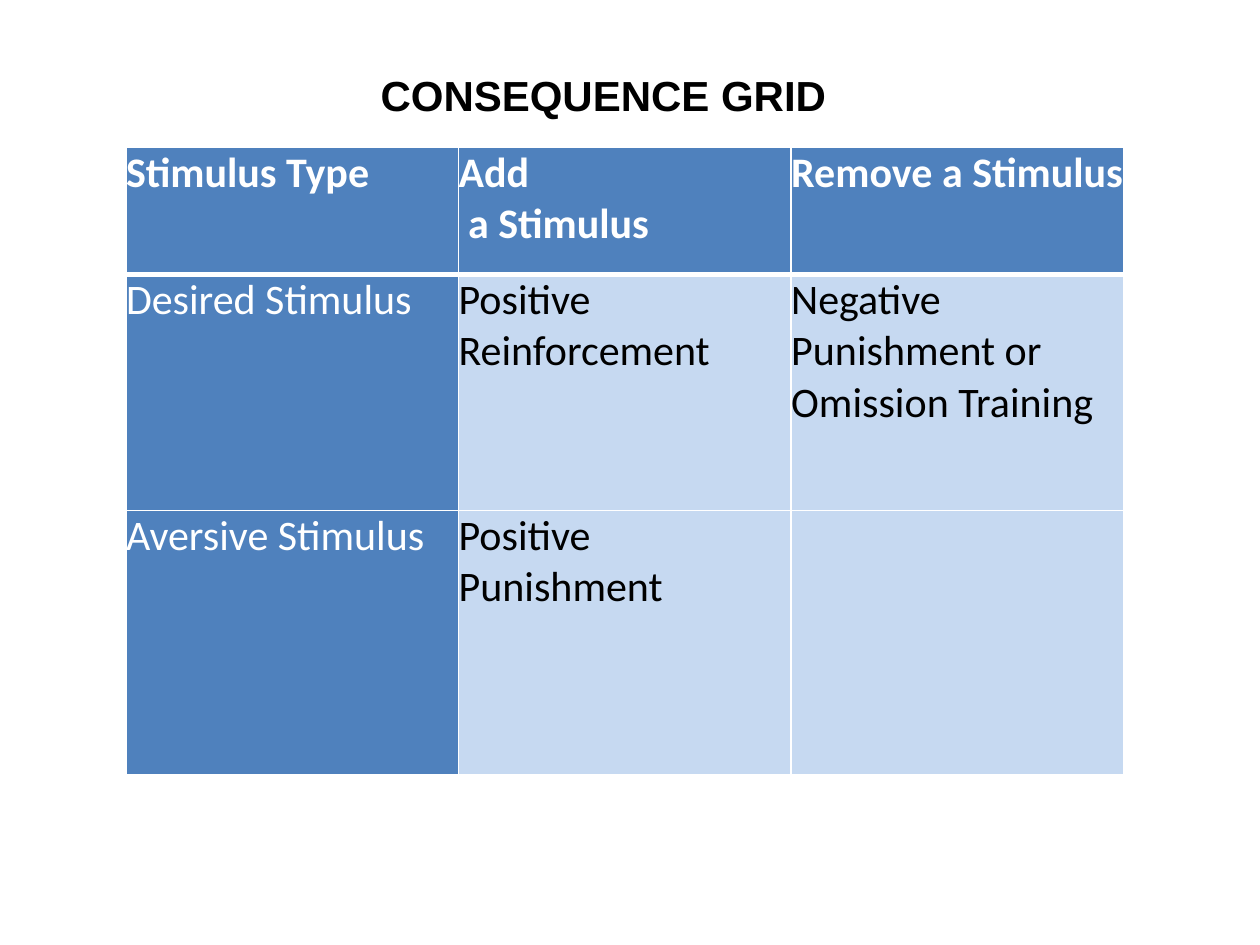
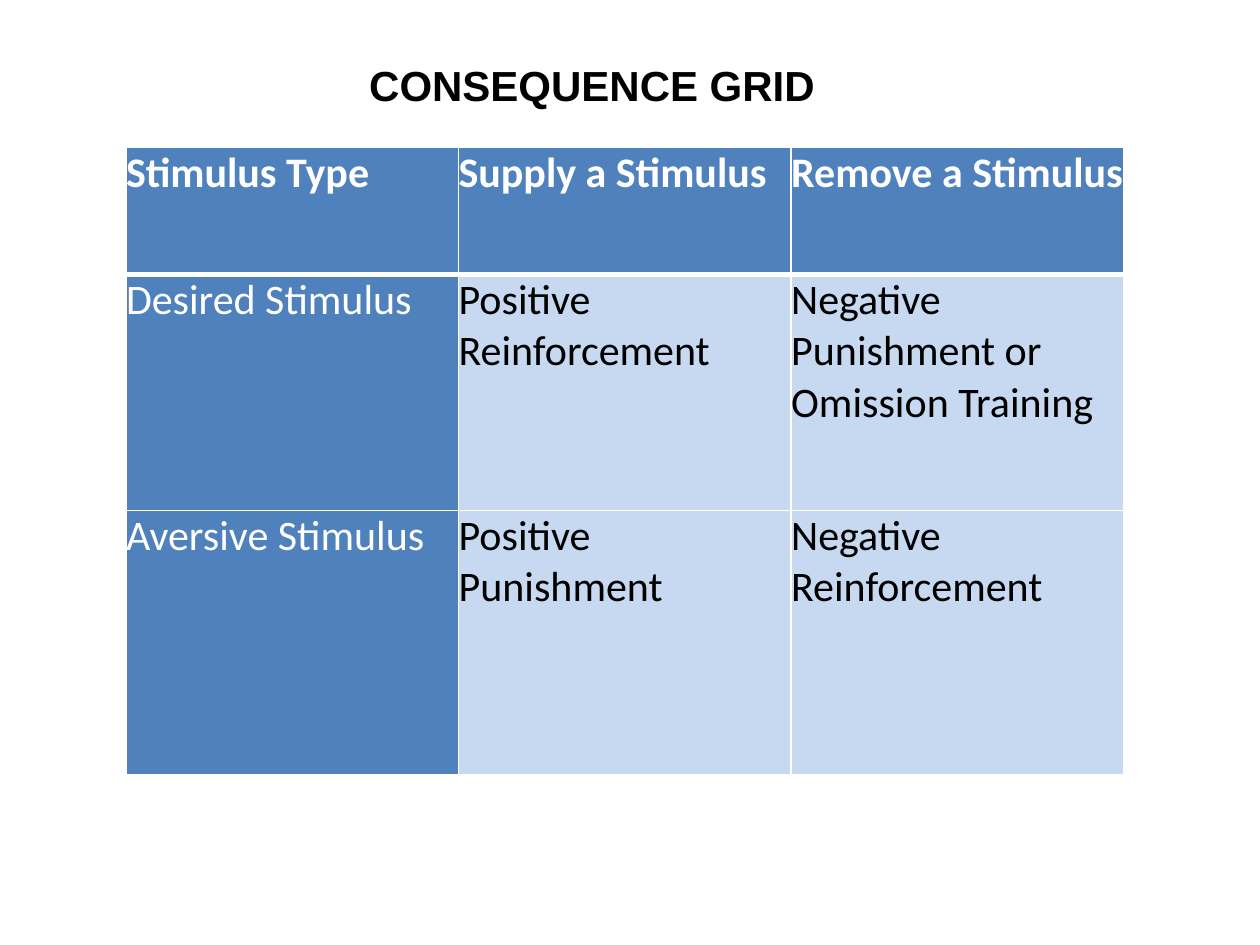
"""Build two consequence grid slides."""
from lxml.etree import SubElement as Sub
from pptx import Presentation as Deck
from pptx.dml.color import RGBColor as Rgb
from pptx.enum.text import MSO_ANCHOR as Anchor, MSO_AUTO_SIZE as Fit, PP_ALIGN as Align
from pptx.oxml.ns import qn
from pptx.util import Inches, Pt

BLUE = Rgb(0x4F, 0x81, 0xBD)
PALE = Rgb(0xC6, 0xD9, 0xF1)
WHITE = Rgb(0xFF, 0xFF, 0xFF)
BLACK = Rgb(0, 0, 0)
COLS, ROWS = 100, 75
SIZE, THIN, THICK = Pt(24), Pt(1), Pt(3)
HEIGHTS = (10.1, 18.7, 21)


class Board:
    """Hold the shared style and the current slide."""

    def __init__(self):
        self.deck = Deck()
        self.deck.slide_width, self.deck.slide_height = Inches(10), Inches(7.5)

    def x(self, cols):
        return round(self.deck.slide_width * cols / COLS)

    def y(self, rows):
        return round(self.deck.slide_height * rows / ROWS)

    def start(self):
        self.slide = self.deck.slides.add_slide(self.deck.slide_layouts[5])
        self.slide.background.fill.solid()
        self.slide.background.fill.fore_color.rgb = WHITE

    def style(self, frame, face, color, bold):
        for para in frame.paragraphs:
            para.alignment = Align.LEFT
            for run in para.runs:
                font = run.font
                font.name, font.size, font.bold = face, SIZE, bold
                font.color.rgb = color

    def title(self, text, left, top):
        box = self.slide.shapes.title
        box.left, box.top = self.x(left), self.y(top)
        box.width, box.height = self.x(37.7), self.y(5.1)
        frame = box.text_frame
        frame.text = text
        frame.word_wrap, frame.auto_size = True, Fit.NONE
        frame.vertical_anchor = Anchor.TOP
        self.style(frame, "Arial", BLACK, True)

    def edge(self, cell, side, width):
        line = Sub(cell._tc.get_or_add_tcPr(), qn(f"a:ln{side}"), w=str(width))
        Sub(Sub(line, qn("a:solidFill")), qn("a:srgbClr"), val=str(WHITE))

    def cell(self, cell, text, row, col):
        head = row == 0
        dark = head or col == 0
        cell.text_frame.text = text
        self.style(cell.text_frame, "Calibri", WHITE if dark else BLACK, head)
        cell.margin_left = cell.margin_right = cell.margin_top = cell.margin_bottom = 0
        widths = {"L": THIN, "R": THIN, "T": THICK if row == 1 else THIN,
                  "B": THICK if head else THIN}
        for side, width in widths.items():
            self.edge(cell, side, width)
        cell.fill.solid()
        cell.fill.fore_color.rgb = BLUE if dark else PALE

    def table(self, data):
        wide = len(data[0])
        grid = self.slide.shapes.add_table(
            len(data), wide, self.x(10), self.y(11.7),
            self.x(26.4 * wide), self.y(sum(HEIGHTS))).table
        for row, (texts, high) in enumerate(zip(data, HEIGHTS)):
            grid.rows[row].height = self.y(high)
            for col, text in enumerate(texts):
                self.cell(grid.cell(row, col), text, row, col)


def main():
    board = Board()
    pages = (
        (29.2, 5, "Add\n a Stimulus", ""),
        (28.3, 4.2, "Supply a Stimulus", "Negative Reinforcement"),
    )
    for left, top, supply, last in pages:
        board.start()
        board.title("CONSEQUENCE GRID", left, top)
        board.table((
            ("Stimulus Type", supply, "Remove a Stimulus"),
            ("Desired Stimulus", "Positive Reinforcement",
             "Negative Punishment or Omission Training"),
            ("Aversive Stimulus", "Positive Punishment", last),
        ))
    board.deck.save("out.pptx")


if __name__ == "__main__":
    main()
